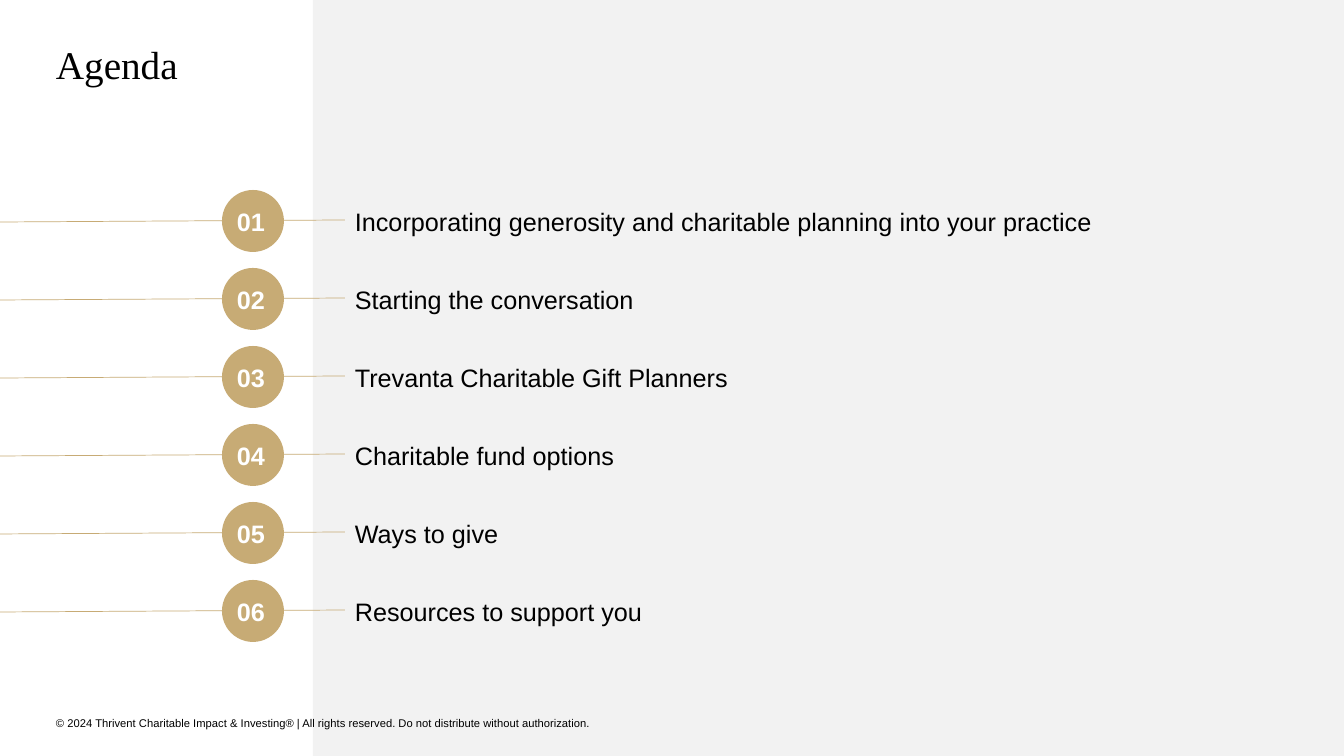
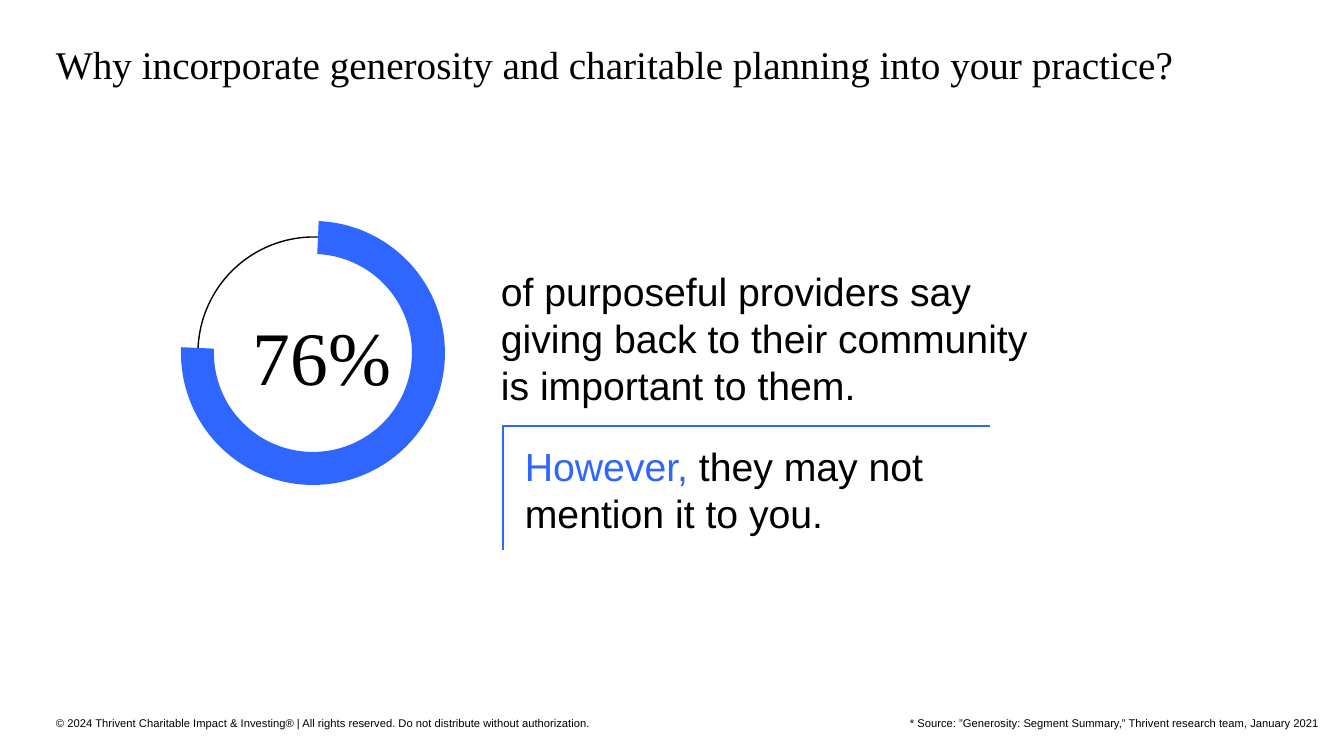
from dataclasses import dataclass
from typing import NamedTuple

from pptx import Presentation
from pptx.dml.color import RGBColor
from pptx.enum.shapes import MSO_CONNECTOR as CONN, MSO_SHAPE as SHP
from pptx.enum.text import MSO_ANCHOR as ANCHOR
from pptx.oxml.ns import qn
from pptx.shapes.autoshape import Shape
from pptx.slide import Slide
from pptx.util import Emu, Pt
from lxml.etree import SubElement

EMU_PER_PX = 914400 / 100.8


@dataclass(frozen=True)
class Theme:
    """Colours, fonts and type sizes of the deck."""
    ink: str = "000000"
    paper: str = "FFFFFF"
    panel: str = "F2F2F2"
    gold: str = "C7AB75"
    blue: str = "2E66FF"
    serif: str = "Times New Roman"
    sans: str = "Arial"
    small: int = 8
    item: int = 18
    large: int = 28
    figure: int = 54
    hairline: float = 0.5
    rule: float = 1


class Box(NamedTuple):
    """A rectangle in px."""
    x: int
    y: int
    w: int
    h: int


class Rule(NamedTuple):
    """A straight line in px."""
    x1: int
    y1: int
    x2: int
    y2: int


class AgendaItem(NamedTuple):
    """A numbered line of the agenda."""
    number: str
    label: str


T = Theme()
FOOTER = ("© 2024 Thrivent Charitable Impact & Investing® | All rights reserved. "
          "Do not distribute without authorization.")
AGENDA = [AgendaItem(f"{n:02}", label) for n, label in enumerate((
    "Incorporating generosity and charitable planning into your practice",
    "Starting the conversation",
    "Trevanta Charitable Gift Planners",
    "Charitable fund options",
    "Ways to give",
    "Resources to support you",
), start=1)]
AGENDA_TOP, AGENDA_PITCH = 190, 78
CORNER_RULES = (Rule(990, 426, 503, 426), Rule(503, 550, 503, 425))


def px(n: int) -> Emu:
    """Turn px into EMU."""
    return Emu(round(n * EMU_PER_PX))


def rgb(color: str) -> RGBColor:
    """Read a hex colour."""
    return RGBColor.from_string(color)


def add_text(s: Slide, box: Box, text: str, *, size: int, font: str = T.sans,
             color: str = T.ink, bold: bool = False, lead: str = "",
             lead_color: str = T.blue, inset: bool = True, wrap: bool = True,
             anchor: ANCHOR = ANCHOR.TOP, spacing: float = 1.0) -> None:
    """Add a text box, with an optional coloured lead before the text."""
    tf = s.shapes.add_textbox(*map(px, box)).text_frame
    tf.word_wrap = wrap
    tf.vertical_anchor = anchor
    if not inset:
        tf.margin_left = tf.margin_right = tf.margin_top = tf.margin_bottom = 0
    p = tf.paragraphs[0]
    p.line_spacing = spacing
    for part, part_color in ((lead, lead_color), (text, color)):
        if part:
            r = p.add_run()
            r.text = part
            r.font.name, r.font.size, r.font.bold = font, Pt(size), bold
            r.font.color.rgb = rgb(part_color)


def add_shape(s: Slide, kind: SHP, box: Box, *, fill: str = "", line: str = "") -> Shape:
    """Add a preset shape with an optional fill and outline."""
    sp = s.shapes.add_shape(kind, *map(px, box))
    sp.shadow.inherit = False
    if fill:
        sp.fill.solid()
        sp.fill.fore_color.rgb = rgb(fill)
    else:
        sp.fill.background()
    if line:
        sp.line.color.rgb = rgb(line)
        sp.line.width = Pt(T.rule)
    else:
        sp.line.fill.background()
    return sp


def add_rule(s: Slide, rule: Rule, *, color: str, width: float) -> None:
    """Add a straight line without a shadow."""
    c = s.shapes.add_connector(CONN.STRAIGHT, *map(px, rule))
    c.line.color.rgb = rgb(color)
    c.line.width = Pt(width)
    SubElement(c._element.spPr, qn("a:effectLst"))


def add_title(s: Slide, text: str) -> None:
    """Add the slide title."""
    add_text(s, Box(56, 46, 1232, 58), text, size=T.large, font=T.serif,
             inset=False, spacing=0.9)


def add_footer(s: Slide) -> None:
    """Add the copyright line."""
    add_text(s, Box(56, 715, 615, 16), FOOTER, size=T.small, inset=False,
             anchor=ANCHOR.MIDDLE)


def add_agenda_item(s: Slide, item: AgendaItem, top: int) -> None:
    """Add one agenda row: line, numbered disc and label."""
    add_rule(s, Rule(0, top + 32, 345, top + 30), color=T.gold, width=T.hairline)
    add_shape(s, SHP.OVAL, Box(222, top, 62, 62), fill=T.gold)
    add_text(s, Box(227, top + 11, 81, 40), item.number, size=T.item,
             color=T.paper, bold=True)
    add_text(s, Box(345, top + 11, 892, 40), item.label, size=T.item)


def add_ring(s: Slide) -> None:
    """Add the 76% ring and its figure."""
    add_shape(s, SHP.OVAL, Box(198, 237, 232, 232), line=T.ink)
    arc = add_shape(s, SHP.BLOCK_ARC, Box(181, 221, 264, 264), fill=T.blue)
    start, end, thickness = 272.5, 182.5, 0.125
    arc.adjustments[0] = start * 0.6
    arc.adjustments[1] = end * 0.6
    arc.adjustments[2] = thickness
    add_text(s, Box(243, 305, 163, 102), "76%", size=T.figure, font=T.serif)


def build_agenda(s: Slide) -> None:
    """Build the agenda slide."""
    add_shape(s, SHP.RECTANGLE, Box(313, 0, 1031, 756), fill=T.panel)
    add_title(s, "Agenda")
    for i, item in enumerate(AGENDA):
        add_agenda_item(s, item, AGENDA_TOP + i * AGENDA_PITCH)
    add_footer(s)


def build_reasons(s: Slide) -> None:
    """Build the slide on why to plan for generosity."""
    add_title(s, "Why incorporate generosity and charitable planning into your practice?")
    add_ring(s)
    add_text(s, Box(491, 262, 582, 152),
             "of purposeful providers say giving back to their community "
             "is important to them.", size=T.large)
    add_text(s, Box(515, 437, 420, 105), " they may not mention it to you.",
             size=T.large, lead="However,")
    add_text(s, Box(900, 711, 431, 24),
             "* Source: ”Generosity: Segment Summary,” Thrivent research team, "
             "January 2021", size=T.small, wrap=False)
    add_footer(s)
    for rule in CORNER_RULES:
        add_rule(s, rule, color=T.blue, width=T.rule)


def main() -> None:
    """Build and save the deck."""
    prs = Presentation()
    prs.slide_width, prs.slide_height = px(1344), px(756)
    for build in (build_agenda, build_reasons):
        s = prs.slides.add_slide(prs.slide_layouts[6])
        s.background.fill.solid()
        s.background.fill.fore_color.rgb = rgb(T.paper)
        build(s)
    prs.save("out.pptx")


if __name__ == "__main__":
    main()
